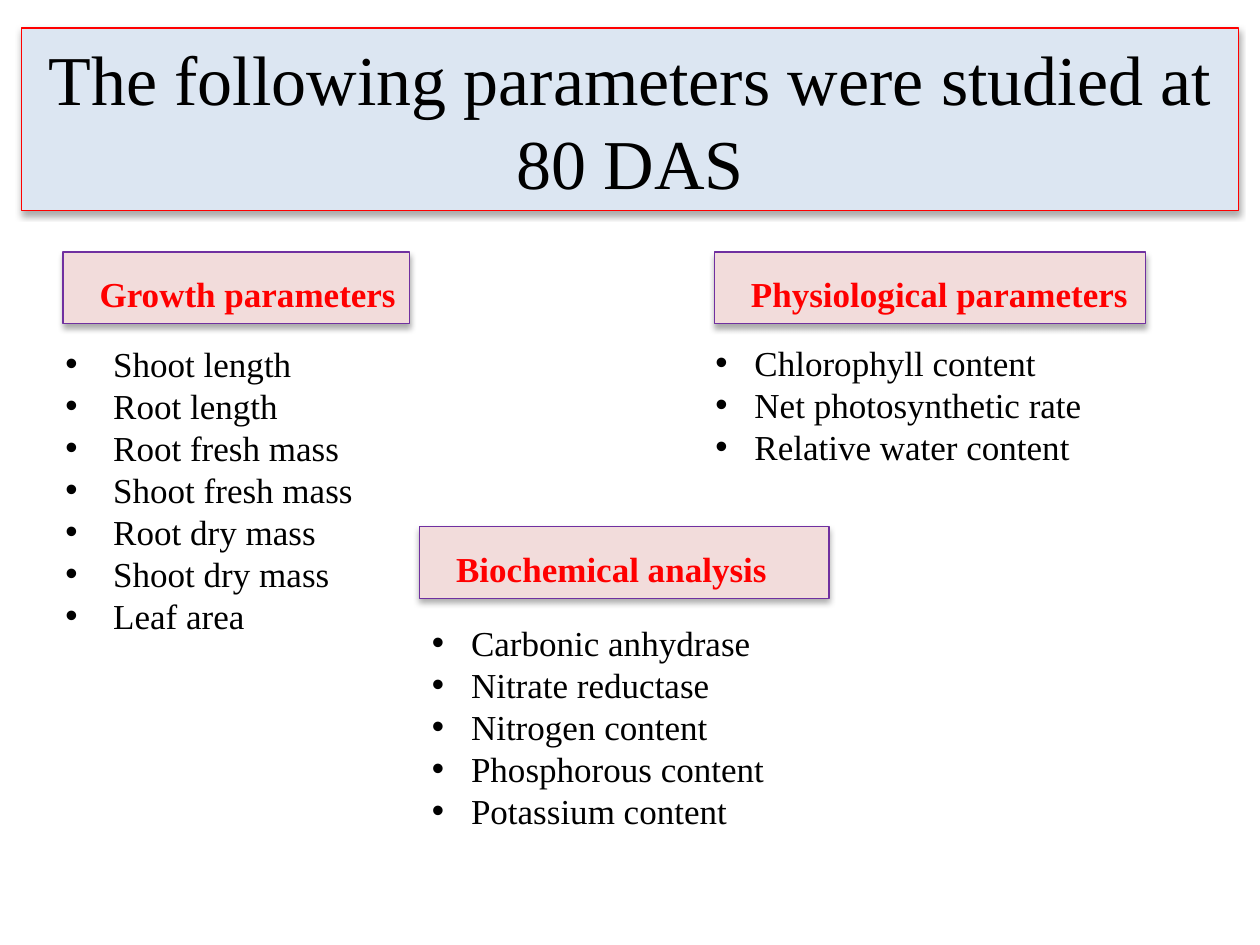
"""Build a slide listing the growth, physiological and biochemical parameters."""
from lxml import etree
from pptx import Presentation
from pptx.dml.color import RGBColor
from pptx.enum import shapes, text
from pptx.oxml import parse_xml
from pptx.oxml.ns import nsdecls, qn
from pptx.util import Inches, Pt

BLACK = RGBColor(0x00, 0x00, 0x00)
RED = RGBColor(0xFF, 0x00, 0x00)
PURPLE = RGBColor(0x70, 0x30, 0xA0)
PALE_BLUE = RGBColor(0xDC, 0xE6, 0xF2)
PALE_PINK = RGBColor(0xF2, 0xDC, 0xDB)

TITLE = "The following parameters were studied at 80 DAS"
TITLE_FONT = {"name": "Times New Roman", "size": Pt(40), "bold": False}
HEADING_FONT = {"name": "Times New Roman", "size": Pt(20), "bold": True}
BODY_FONT = {"name": "Times New Roman", "size": Pt(20), "bold": False}

GROUPS = [
    ("Growth parameters", (0.5, 2, 2.75, 0.57), (0.42, 2.67, 3.18, 2.46), 0.38,
     ["Shoot length", "Root length", "Root fresh mass", "Shoot fresh mass",
      "Root dry mass", "Shoot dry mass", "Leaf area"]),
    ("Physiological parameters", (5.67, 2, 3.42, 0.57), (5.58, 2.66, 3.33, 1.11), 0.31,
     ["Chlorophyll content", "Net photosynthetic rate", "Relative water content"]),
    ("Biochemical analysis", (3.33, 4.18, 3.25, 0.57), (3.33, 4.88, 3.42, 1.78), 0.31,
     ["Carbonic anhydrase", "Nitrate reductase", "Nitrogen content",
      "Phosphorous content", "Potassium content"]),
]


def add_text(p, words, font, color):
    r = p.add_run()
    r.text = words
    for name, value in font.items():
        setattr(r.font, name, value)
    r.font.color.rgb = color


def add_shadow(sp):
    sp.shadow.inherit = False
    effects = sp._element.spPr.find(qn("a:effectLst"))
    effects.append(parse_xml(
        f'<a:outerShdw {nsdecls("a")} blurRad="{Pt(3.5)}" dist="{Pt(2.2)}" '
        'dir="5400000" rotWithShape="0"><a:srgbClr val="000000">'
        '<a:alpha val="32000"/></a:srgbClr></a:outerShdw>'))


def add_box(s, at, words, font, color, fill, line, width, align, frame):
    sp = s.shapes.add_shape(shapes.MSO_SHAPE.RECTANGLE, *map(Inches, at))
    sp.fill.solid()
    sp.fill.fore_color.rgb = fill
    sp.line.color.rgb = line
    sp.line.width = Pt(width)
    add_shadow(sp)
    tf = sp.text_frame
    for name, value in {"word_wrap": True, **frame}.items():
        setattr(tf, name, value)
    p = tf.paragraphs[0]
    p.alignment = align
    add_text(p, words, font, color)


def add_bullets(s, at, items, indent):
    tf = s.shapes.add_textbox(*map(Inches, at)).text_frame
    tf.word_wrap = True
    for i, item in enumerate(items):
        p = tf.add_paragraph() if i else tf.paragraphs[0]
        pPr = p._p.get_or_add_pPr()
        pPr.set("marL", str(Inches(indent)))
        pPr.set("indent", str(-Inches(indent)))
        etree.SubElement(pPr, qn("a:buFont"), typeface="Arial")
        etree.SubElement(pPr, qn("a:buChar"), char="•")
        add_text(p, item, BODY_FONT, BLACK)


def main():
    prs = Presentation()
    prs.slide_width, prs.slide_height = Inches(10), Inches(7.5)
    s = prs.slides.add_slide(prs.slide_layouts[6])
    add_box(s, (0.17, 0.22, 9.66, 1.45), TITLE, TITLE_FONT, BLACK, PALE_BLUE, RED, 1,
            text.PP_ALIGN.CENTER, {"vertical_anchor": text.MSO_ANCHOR.MIDDLE})
    heading_frame = {"vertical_anchor": text.MSO_ANCHOR.BOTTOM,
                     "margin_left": Inches(0.29), "margin_right": Inches(0.05),
                     "margin_bottom": Inches(0.07)}
    for heading, heading_at, list_at, indent, items in GROUPS:
        add_box(s, heading_at, heading, HEADING_FONT, RED, PALE_PINK, PURPLE, 0.75,
                text.PP_ALIGN.JUSTIFY, heading_frame)
        add_bullets(s, list_at, items, indent)
    prs.save("out.pptx")


if __name__ == "__main__":
    main()
